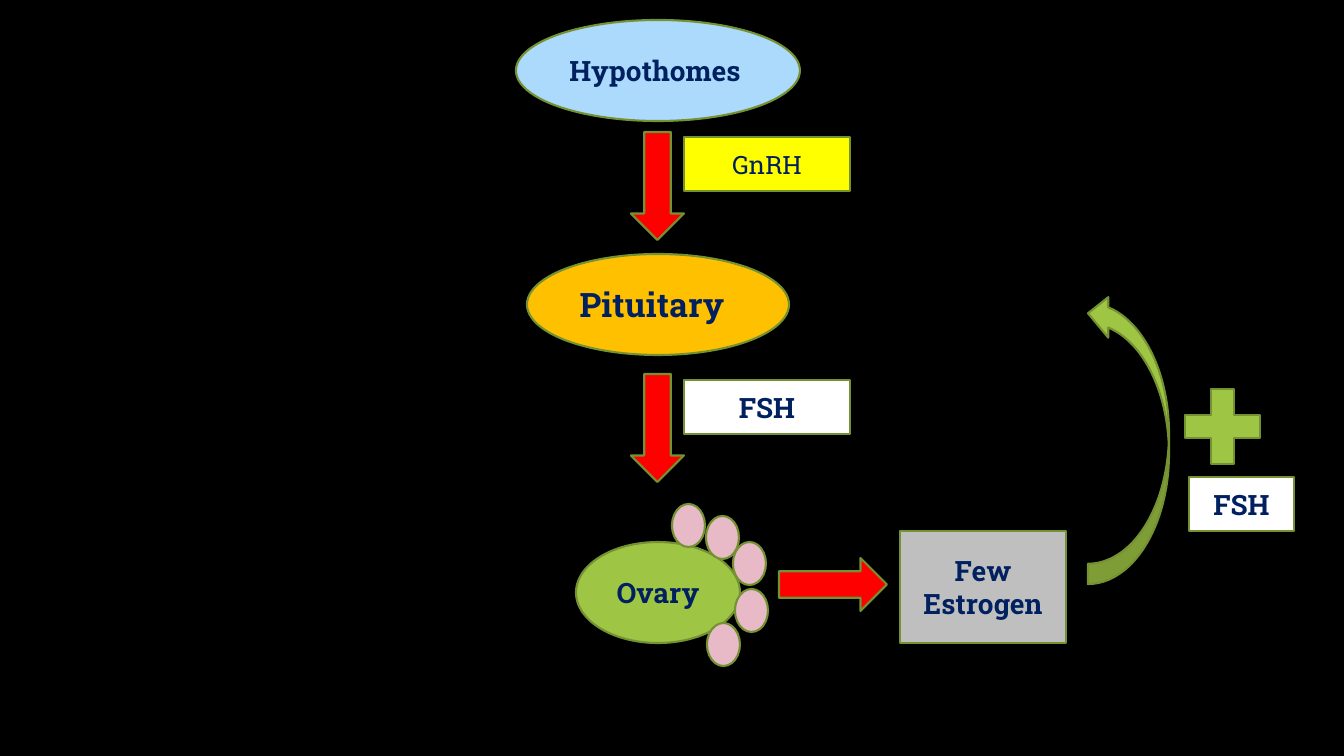
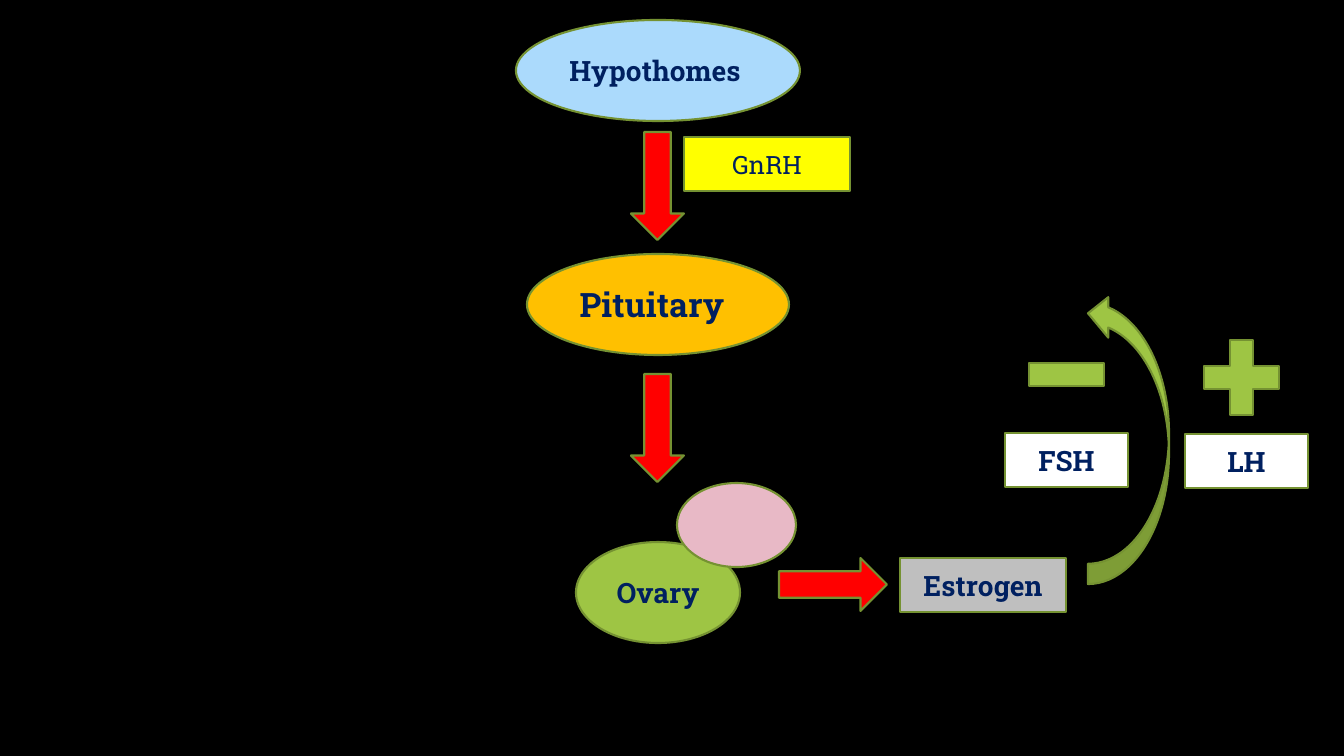
"""Build two slides on hormone feedback between pituitary and ovary."""
import dataclasses

import pptx
import pptx.dml.color
import pptx.enum.shapes
import pptx.enum.text
import pptx.shapes.autoshape
import pptx.slide
import pptx.util

SLIDE_WIDTH, SLIDE_HEIGHT = 1344, 756
EMU_PER_PX = 12192000 / SLIDE_WIDTH
FONT = "Roboto Slab"
INSET = 10
COLORS = {
    "background": "000000",
    "outline": "759232",
    "text": "002060",
    "sky": "ABDAFC",
    "red": "FF0000",
    "yellow": "FFFF00",
    "amber": "FFC000",
    "green": "9EC544",
    "white": "FFFFFF",
    "pink": "E8B9C6",
    "gray": "BFBFBF",
}
Kind = pptx.enum.shapes.MSO_SHAPE


@dataclasses.dataclass(frozen=True)
class Figure:
    """A preset shape with its place in px, fill and optional label."""

    kind: Kind
    left: int
    top: int
    width: int
    height: int
    fill: str
    text: str = ""
    size: int = 20
    bold: bool = True
    shift: int = 0
    rotation: int = 0


def down_arrow(top: int) -> Figure:
    """Describe a red arrow on the central axis."""
    return Figure(Kind.DOWN_ARROW, 631, top, 53, 108, "red")


def label(left: int, top: int, width: int, text: str, fill: str = "white", **text_format) -> Figure:
    """Describe a one-line hormone label."""
    return Figure(Kind.RECTANGLE, left, top, width, 54, fill, text, **text_format)


def sign(kind: Kind, left: int, top: int) -> Figure:
    """Describe a plus or minus sign."""
    return Figure(kind, left, top, 101, 101, "green")


SHARED = [
    Figure(Kind.OVAL, 516, 20, 284, 101, "sky", "Hypothomes", shift=3),
    down_arrow(132),
    label(684, 137, 166, "GnRH", "yellow", size=18, bold=False),
    Figure(Kind.OVAL, 527, 254, 262, 101, "amber", "Pituitary", size=24, shift=6),
    down_arrow(374),
    Figure(Kind.OVAL, 576, 542, 164, 101, "green", "Ovary"),
    Figure(Kind.RIGHT_ARROW, 779, 558, 108, 53, "red"),
    Figure(Kind.CURVED_RIGHT_ARROW, 1088, 293, 81, 291, "green", rotation=180),
]
FOLLICLES = [(672, 504), (706, 516), (733, 542), (735, 589), (707, 623)]
EARLY_PHASE = [
    label(684, 380, 166, "FSH"),
    *(Figure(Kind.OVAL, left, top, 33, 43, "pink") for left, top in FOLLICLES),
    Figure(Kind.RECTANGLE, 900, 531, 166, 112, "gray", "Few Estrogen"),
    sign(Kind.MATH_PLUS, 1172, 376),
    label(1189, 477, 105, "FSH"),
]
LATE_PHASE = [
    Figure(Kind.OVAL, 677, 483, 119, 84, "pink"),
    label(900, 558, 166, "Estrogen", "gray"),
    sign(Kind.MATH_PLUS, 1191, 327),
    label(1185, 434, 123, "LH"),
    sign(Kind.MATH_MINUS, 1016, 324),
    label(1005, 433, 123, "FSH"),
]


def px(length: int) -> pptx.util.Emu:
    """Turn px into EMU."""
    return pptx.util.Emu(round(length * EMU_PER_PX))


def color(name: str) -> pptx.dml.color.RGBColor:
    """Look up a named colour."""
    return pptx.dml.color.RGBColor.from_string(COLORS[name])


def write_text(
    shape: pptx.shapes.autoshape.Shape, text: str, *, size: int, bold: bool, shift: int
) -> None:
    """Write centred text, moved left by shift px."""
    frame = shape.text_frame
    frame.word_wrap = True
    frame.vertical_anchor = pptx.enum.text.MSO_ANCHOR.MIDDLE
    frame.margin_left = px(INSET - shift)
    frame.margin_right = px(INSET + shift)
    paragraph = frame.paragraphs[0]
    paragraph.alignment = pptx.enum.text.PP_ALIGN.CENTER
    run = paragraph.add_run()
    run.text = text
    run.font.name = FONT
    run.font.size = pptx.util.Pt(size)
    run.font.bold = bold
    run.font.color.rgb = color("text")


def draw_figure(slide: pptx.slide.Slide, figure: Figure) -> None:
    """Draw one figure with the common outline."""
    shape = slide.shapes.add_shape(
        figure.kind, px(figure.left), px(figure.top), px(figure.width), px(figure.height)
    )
    shape.shadow.inherit = False
    shape.rotation = figure.rotation
    shape.fill.solid()
    shape.fill.fore_color.rgb = color(figure.fill)
    shape.line.color.rgb = color("outline")
    shape.line.width = pptx.util.Pt(1.5)
    if figure.text:
        write_text(shape, figure.text, size=figure.size, bold=figure.bold, shift=figure.shift)


def main() -> None:
    """Build and save the presentation."""
    presentation = pptx.Presentation()
    presentation.slide_width = px(SLIDE_WIDTH)
    presentation.slide_height = px(SLIDE_HEIGHT)
    for phase in (EARLY_PHASE, LATE_PHASE):
        slide = presentation.slides.add_slide(presentation.slide_layouts[6])
        slide.background.fill.solid()
        slide.background.fill.fore_color.rgb = color("background")
        for figure in SHARED + phase:
            draw_figure(slide, figure)
    presentation.save("out.pptx")


if __name__ == "__main__":
    main()
